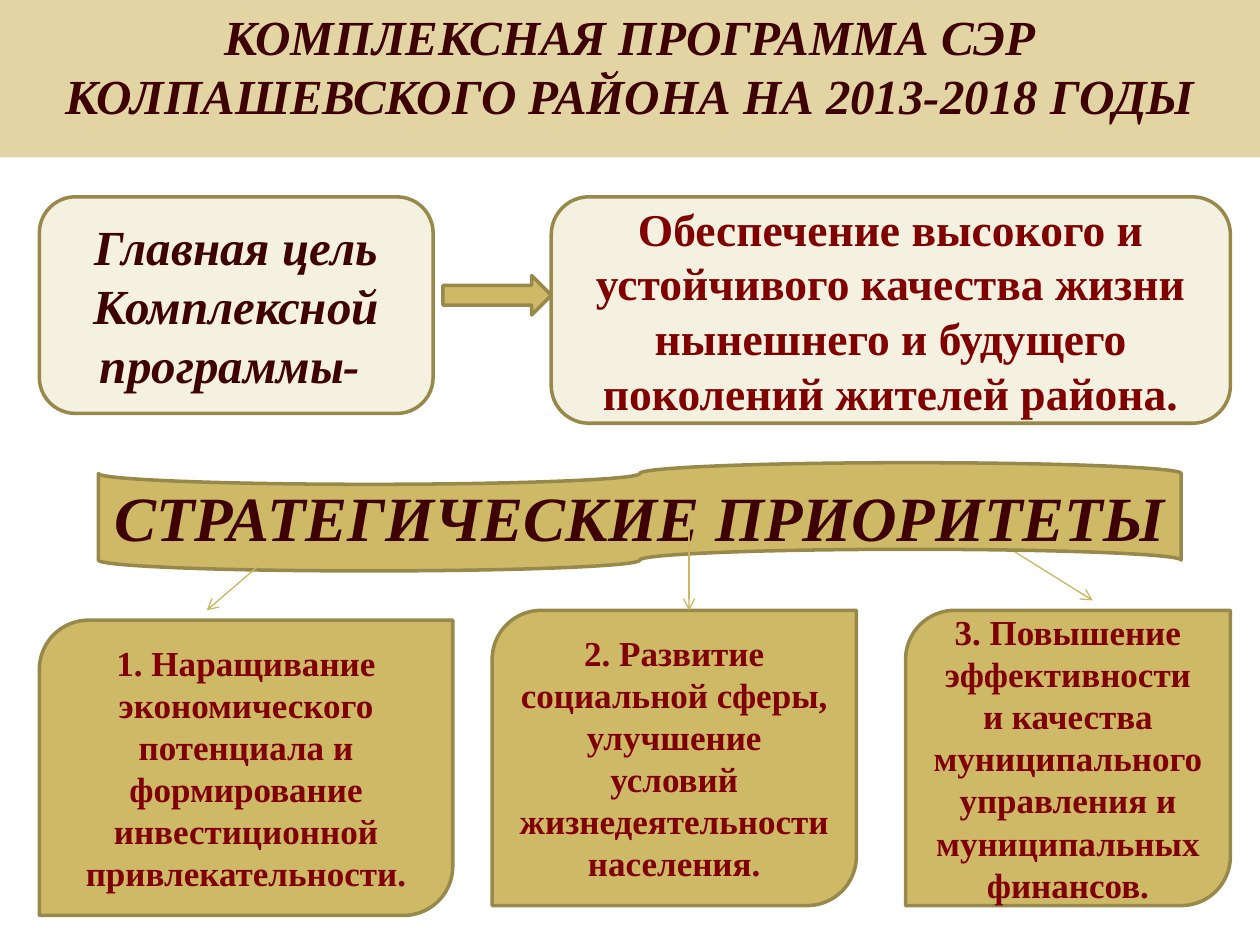
from collections import namedtuple

from lxml.etree import SubElement
from pptx import Presentation
from pptx.dml.color import RGBColor
from pptx.enum.shapes import MSO_CONNECTOR, MSO_SHAPE
from pptx.enum.text import MSO_ANCHOR, PP_ALIGN
from pptx.oxml.ns import qn
from pptx.util import Inches, Pt

CREAM = RGBColor(0xF5, 0xF1, 0xE0)
SAND = RGBColor(0xE2, 0xD5, 0xA3)
GOLD = RGBColor(0xCE, 0xB9, 0x66)
ARROW_GOLD = RGBColor(0xCC, 0xB6, 0x61)
OLIVE = RGBColor(0x98, 0x89, 0x4B)
DARK_BROWN = RGBColor(0x3E, 0x00, 0x00)
MAROON = RGBColor(0x80, 0x00, 0x00)

FONT = "Times New Roman"
COLUMNS = 128
ROWS = 96
UNIT = Inches(10) / COLUMNS

Box = namedtuple("Box", "left top width height")
Point = namedtuple("Point", "x y")
Priority = namedtuple("Priority", "left top width text")

MARGIN = 4
CONTENT_WIDTH = 121
HEADER_BOX = Box(0, 0, COLUMNS, 16)
GOAL_BOX = Box(MARGIN, 20, CONTENT_WIDTH, 23)
PRIORITIES_BOX = Box(MARGIN, 47, CONTENT_WIDTH, 46)

LABEL_WIDTH = 40
GOAL_LEFT = 52
GOAL_ARROW_GAP = 1
CARD_HEIGHT = 30
BANNER_INDENT = 6
BANNER_WIDTH = 110
BANNER_HEIGHT = 11

PRIORITIES = [
    Priority(0, 16, 42, "1. Наращивание экономического потенциала и формирование "
                        "инвестиционной привлекательности."),
    Priority(46, 15, 37, "2. Развитие социальной сферы, улучшение условий "
                         "жизнедеятельности населения."),
    Priority(88, 15, 33, "3. Повышение эффективности и качества муниципального "
                         "управления и муниципальных финансов."),
]
ARROW_BEHIND_BANNER = (Point(99, 9), Point(107, 14))
ARROWS_OVER_BANNER = [
    (Point(24, 9), Point(17, 15)),
    (Point(66, 5), Point(66, 15)),
]


def grid(value):
    return round(value * UNIT)


def inside(box, left, top, width, height):
    return Box(box.left + left, box.top + top, width, height)


def add_block(slide, kind, box, fill, outline=OLIVE):
    shape = slide.shapes.add_shape(kind, *map(grid, box))
    shape.shadow.inherit = False
    shape.fill.solid()
    shape.fill.fore_color.rgb = fill
    if outline is None:
        shape.line.fill.background()
    else:
        shape.line.color.rgb = outline
        shape.line.width = Pt(2)
    return shape


def write(shape, text, size, color, italic=False, anchor=MSO_ANCHOR.MIDDLE):
    frame = shape.text_frame
    frame.word_wrap = True
    frame.vertical_anchor = anchor
    paragraph = frame.paragraphs[0]
    paragraph.text = text
    paragraph.alignment = PP_ALIGN.CENTER
    font = paragraph.font
    font.name = FONT
    font.size = Pt(size)
    font.bold = True
    font.italic = italic
    font.color.rgb = color


def add_arrow(slide, box, start, end):
    connector = slide.shapes.add_connector(
        MSO_CONNECTOR.STRAIGHT,
        grid(box.left + start.x), grid(box.top + start.y),
        grid(box.left + end.x), grid(box.top + end.y))
    connector.line.color.rgb = ARROW_GOLD
    connector.line.width = Pt(0.75)
    properties = connector._element.spPr
    SubElement(properties.find(qn("a:ln")), qn("a:tailEnd"), type="arrow")
    SubElement(properties, qn("a:effectLst"))


def add_header(slide, box):
    header = add_block(slide, MSO_SHAPE.RECTANGLE, box, SAND, outline=None)
    write(header, "КОМПЛЕКСНАЯ ПРОГРАММА СЭР КОЛПАШЕВСКОГО РАЙОНА НА 2013-2018 ГОДЫ",
          28, DARK_BROWN, italic=True, anchor=MSO_ANCHOR.TOP)


def add_goal(slide, box):
    label_box = inside(box, 0, 0, LABEL_WIDTH, box.height - 1)
    label = add_block(slide, MSO_SHAPE.ROUNDED_RECTANGLE, label_box, CREAM)
    write(label, "Главная цель Комплексной программы- ", 28, DARK_BROWN, italic=True)

    goal_box = inside(box, GOAL_LEFT, 0, box.width - GOAL_LEFT, box.height)
    goal = add_block(slide, MSO_SHAPE.ROUNDED_RECTANGLE, goal_box, CREAM)
    write(goal, "Обеспечение высокого и устойчивого качества жизни "
                "нынешнего и будущего поколений жителей района.", 26, MAROON)

    arrow_left = LABEL_WIDTH + GOAL_ARROW_GAP
    arrow_box = inside(box, arrow_left, 8, GOAL_LEFT - arrow_left, 4)
    add_block(slide, MSO_SHAPE.RIGHT_ARROW, arrow_box, GOLD)


def add_priorities(slide, box):
    for priority in PRIORITIES:
        card_box = inside(box, priority.left, priority.top, priority.width, CARD_HEIGHT)
        card = add_block(slide, MSO_SHAPE.ROUND_2_DIAG_RECTANGLE, card_box, GOLD)
        write(card, priority.text, 20, MAROON)

    add_arrow(slide, box, *ARROW_BEHIND_BANNER)

    banner_box = inside(box, BANNER_INDENT, 0, BANNER_WIDTH, BANNER_HEIGHT)
    banner = add_block(slide, MSO_SHAPE.FLOWCHART_PUNCHED_TAPE, banner_box, GOLD)
    write(banner, "СТРАТЕГИЧЕСКИЕ ПРИОРИТЕТЫ", 36, DARK_BROWN, italic=True)

    for start, end in ARROWS_OVER_BANNER:
        add_arrow(slide, box, start, end)


def main():
    presentation = Presentation()
    presentation.slide_width = grid(COLUMNS)
    presentation.slide_height = grid(ROWS)
    slide = presentation.slides.add_slide(presentation.slide_layouts[6])
    add_priorities(slide, PRIORITIES_BOX)
    add_goal(slide, GOAL_BOX)
    add_header(slide, HEADER_BOX)
    presentation.save("out.pptx")


if __name__ == "__main__":
    main()
